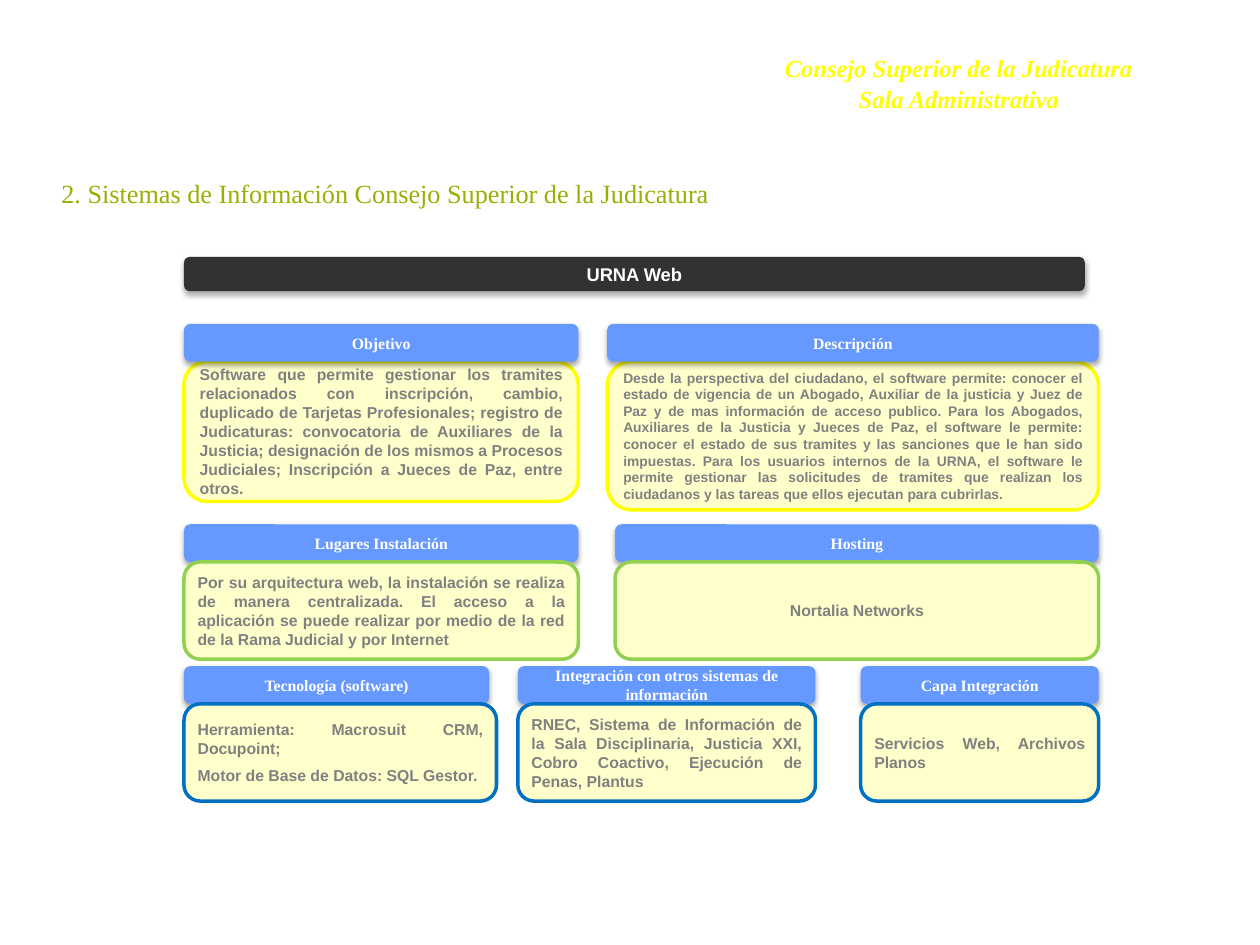
"""Build the URNA Web information-system slide."""
from lxml import etree
from pptx import Presentation
from pptx import util as u
from pptx.dml.color import RGBColor
from pptx.enum import shapes, text
from pptx.oxml.ns import qn

SERIF, SANS = "Times New Roman", "Arial"
CENTER, JUSTIFY = text.PP_ALIGN.CENTER, text.PP_ALIGN.JUSTIFY
LEFT, HEAD_H = 3.71, 0.76

BANNER = ["Consejo Superior de la Judicatura", "Sala Administrativa"]
TITLE = ["2. Sistemas de Información Consejo Superior de la Judicatura"]
SYSTEM = ["URNA Web"]

ROWS = [
    {"top": 6.53, "line": "FFFF00", "head_in_front": True, "cards": [
        {"head": "Descripción", "x": 12.24, "w": 9.91, "h": 2.99, "size": 7.9, "body": [
            "Desde la perspectiva del ciudadano, el software permite: conocer el estado de "
            "vigencia de un Abogado, Auxiliar de la justicia y Juez de Paz y de mas información "
            "de acceso publico. Para los Abogados, Auxiliares de la Justicia y Jueces de Paz, el "
            "software le permite: conocer el estado de sus tramites y las sanciones que le han "
            "sido impuestas. Para los usuarios internos de la URNA, el software le permite "
            "gestionar las solicitudes de tramites que realizan los ciudadanos y las tareas que "
            "ellos ejecutan para cubrirlas."]},
        {"head": "Objetivo", "x": LEFT, "w": 7.95, "h": 2.82, "body": [
            "Software que permite gestionar los tramites relacionados con inscripción, cambio, "
            "duplicado de Tarjetas Profesionales; registro de Judicaturas: convocatoria de "
            "Auxiliares de la Justicia; designación de los mismos a Procesos Judiciales; "
            "Inscripción a Jueces de Paz, entre otros."]},
    ]},
    {"top": 10.57, "line": "92D050", "head_in_front": False, "cards": [
        {"head": "Lugares Instalación", "x": LEFT, "w": 7.95, "body": [
            "Por su arquitectura web, la instalación se realiza de manera centralizada. El acceso "
            "a la aplicación se puede realizar por medio de la red de la Rama Judicial y por "
            "Internet"]},
        {"head": "Hosting", "x": 12.4, "w": 9.75, "align": CENTER, "body": ["Nortalia Networks"]},
    ]},
    {"top": 13.43, "line": "0070C0", "head_in_front": False, "cards": [
        {"head": "Tecnología (software)", "x": LEFT, "w": 6.3, "head_w": 6.15, "body": [
            "Herramienta: Macrosuit CRM, Docupoint;", "Motor de Base de Datos: SQL Gestor."]},
        {"head": "Integración con otros sistemas de información", "x": 10.44, "w": 6, "body": [
            "RNEC, Sistema de Información de la Sala Disciplinaria, Justicia XXI, Cobro Coactivo, "
            "Ejecución de Penas, Plantus"]},
        {"head": "Capa Integración", "x": 17.35, "w": 4.8, "body": [
            "Servicios Web, Archivos Planos"]},
    ]},
]


def rgb(value):
    """Turn a hex string into a colour."""
    return RGBColor.from_string(value)


def write(s, lines, size, font, color, align=CENTER, bold=True, italic=False, spacing=None):
    """Put formatted paragraphs in a shape."""
    tf = s.text_frame
    tf.word_wrap = True
    tf.text = "\n".join(lines)
    for i, p in enumerate(tf.paragraphs):
        p.alignment = align
        if spacing:
            p.line_spacing = spacing
        elif i:
            p.space_before = u.Pt(size / 2)
        for r in p.runs:
            r.font.name, r.font.size = font, u.Pt(size)
            r.font.bold, r.font.italic = bold, italic
            r.font.color.rgb = rgb(color)


def add_text(slide, x, y, w, h, anchor):
    """Add an empty text box."""
    s = slide.shapes.add_textbox(u.Cm(x), u.Cm(y), u.Cm(w), u.Cm(h))
    s.text_frame.vertical_anchor = anchor
    return s


def add_box(slide, x, y, w, h, fill, line=None):
    """Add a rounded box with a plain fill and an optional outline."""
    s = slide.shapes.add_shape(shapes.MSO_SHAPE.ROUNDED_RECTANGLE,
                               u.Cm(x), u.Cm(y), u.Cm(w), u.Cm(h))
    s.shadow.inherit = False
    s.fill.solid()
    s.fill.fore_color.rgb = rgb(fill)
    if line:
        s.line.color.rgb = rgb(line)
        s.line.width = u.Pt(2)
    else:
        s.line.fill.background()
    tf = s.text_frame
    tf.vertical_anchor = text.MSO_ANCHOR.MIDDLE
    tf.margin_left = tf.margin_right = u.Cm(0.18)
    tf.margin_top = tf.margin_bottom = u.Cm(0.1)
    return s


def add_bar(slide, x, y, w, h, fill):
    """Add a rounded bar with a soft shadow below it."""
    s = add_box(slide, x, y, w, h, fill)
    effects = s._element.spPr.find(qn("a:effectLst"))
    shadow = etree.SubElement(effects, qn("a:outerShdw"), blurRad=str(u.Pt(3.1)),
                              dist=str(u.Pt(1.8)), dir="5400000", rotWithShape="0")
    color = etree.SubElement(shadow, qn("a:srgbClr"), val="000000")
    etree.SubElement(color, qn("a:alpha"), val="35000")
    return s


def add_heads(slide, row):
    """Draw the heading bars of a row."""
    for card in row["cards"]:
        s = add_bar(slide, card["x"], row["top"], card.get("head_w", card["w"]), HEAD_H, "6699FF")
        write(s, [card["head"]], 9, SERIF, "FFFFFF")


def add_bodies(slide, row):
    """Draw the outlined bodies of a row."""
    for card in row["cards"]:
        s = add_box(slide, card["x"], row["top"] + HEAD_H, card["w"], card.get("h", 1.96),
                    "FFFFCC", row["line"])
        write(s, card["body"], card.get("size", 9), SANS, "808080", card.get("align", JUSTIFY))


def main():
    """Build and save the slide."""
    prs = Presentation()
    prs.slide_width, prs.slide_height = u.Cm(25.4), u.Cm(19.05)
    slide = prs.slides.add_slide(prs.slide_layouts[6])

    banner = add_text(slide, 15.57, 0.91, 7.52, 2.03, text.MSO_ANCHOR.TOP)
    write(banner, BANNER, 14, SERIF, "FFFF00", italic=True, spacing=1.05)
    title = add_text(slide, 0, 3.23, 15.54, 1.32, text.MSO_ANCHOR.MIDDLE)
    write(title, TITLE, 15, SERIF, "9AAE04", bold=False)
    system = add_bar(slide, LEFT, 5.18, 18.16, 0.69, "323232")
    write(system, SYSTEM, 10.5, SANS, "FFFFFF")

    for row in ROWS:
        layers = [add_heads, add_bodies]
        if row["head_in_front"]:
            layers.reverse()
        for draw in layers:
            draw(slide, row)
    prs.save("out.pptx")


if __name__ == "__main__":
    main()
